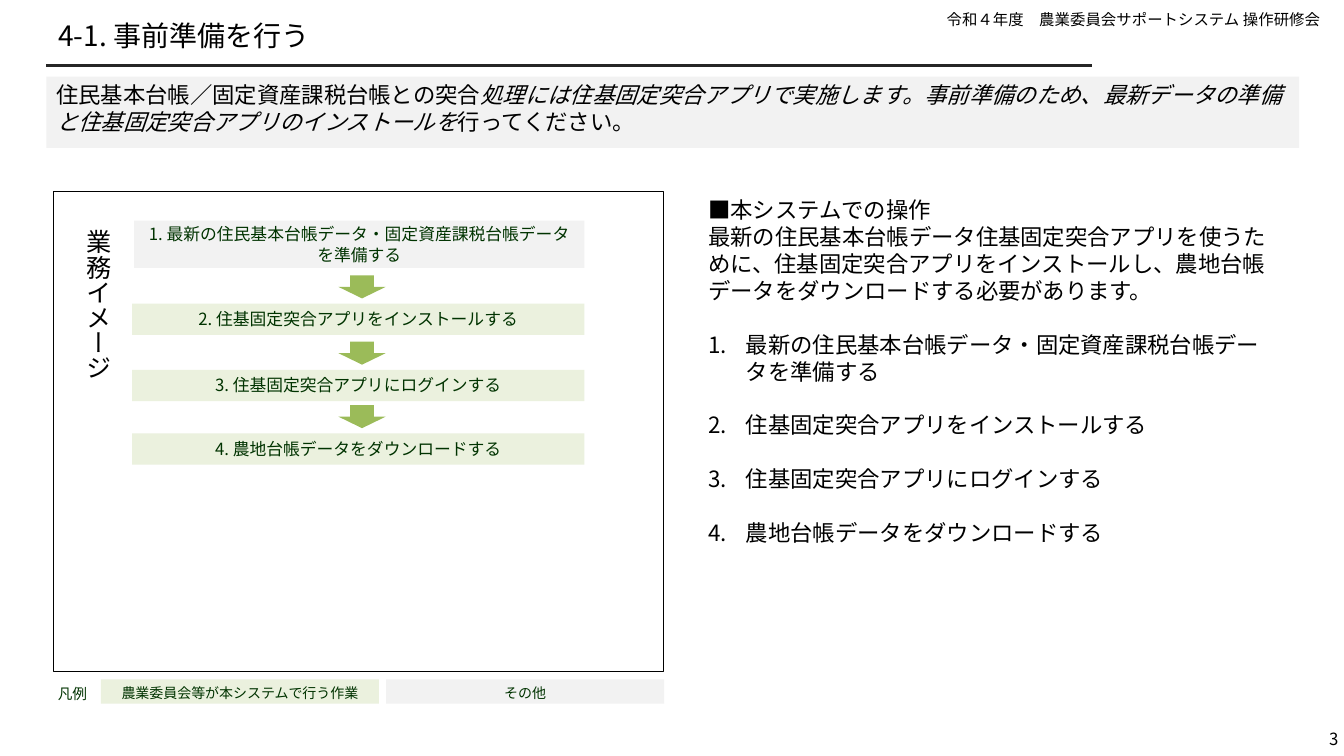
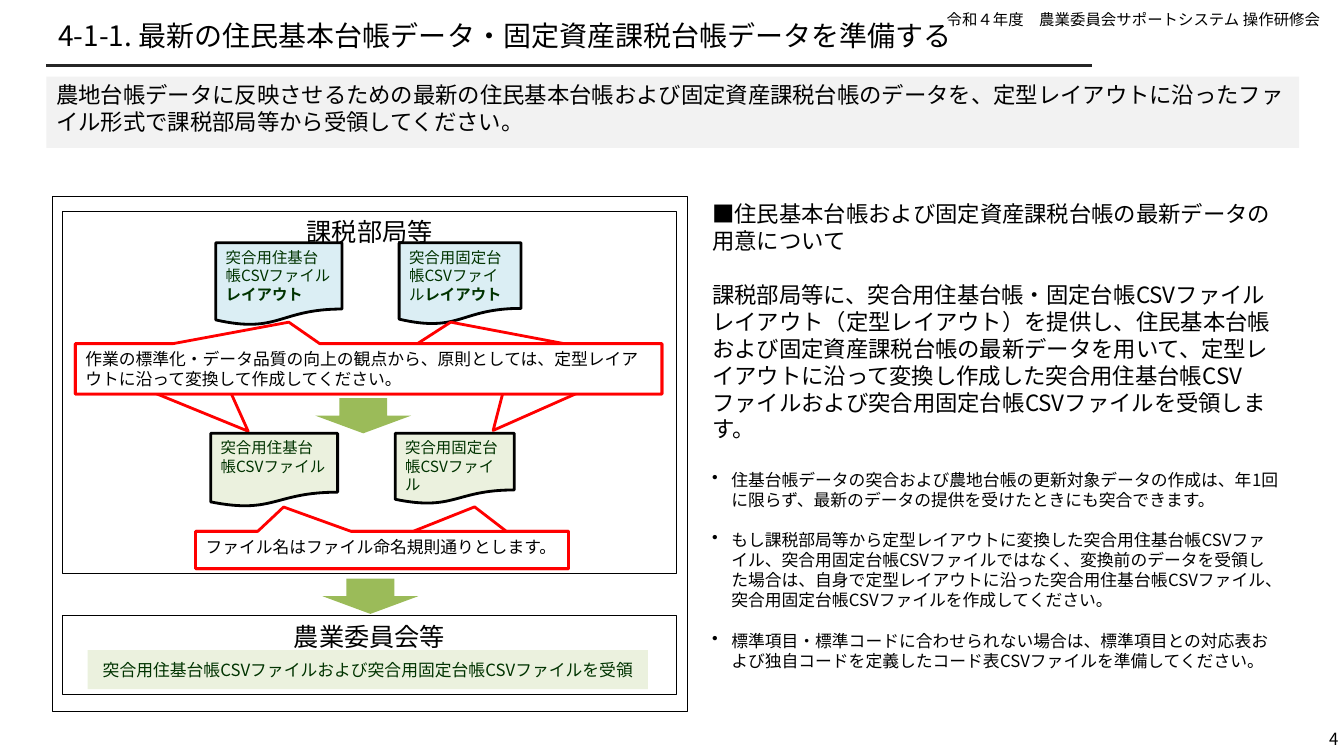
from lxml.etree import SubElement
from pptx import Presentation
from pptx.dml.color import RGBColor
from pptx.enum.shapes import MSO_CONNECTOR as Connector, MSO_SHAPE as Shape
from pptx.enum.text import MSO_ANCHOR as Anchor, PP_ALIGN as Align
from pptx.oxml.ns import qn
from pptx.util import Cm, Pt

FONT = "Noto Sans CJK JP"
BLACK, DARK_GREEN, RULE = "000000", "003300", "262626"
PALE_GREEN, PALE_GRAY, PALE_BLUE = "EBF1DE", "F2F2F2", "DBEEF4"
GREEN, RED, WHITE = "9BBB59", "FF0000", "FFFFFF"
LINE_HEIGHT = 1.2


def color(value):
    return RGBColor.from_string(value)


def add_span(para, text, size, ink, bold=False, italic=False):
    span = para.add_run()
    span.text = text
    font = span.font
    font.size, font.bold, font.italic = Pt(size), bold, italic
    font.color.rgb = color(ink)
    font.name = FONT
    properties = span._r.get_or_add_rPr()
    properties.set("lang", "ja-JP")
    SubElement(properties, qn("a:ea")).set("typeface", FONT)


def add_bullet(para, indent, mark):
    properties = para._p.get_or_add_pPr()
    properties.set("marL", str(Cm(indent)))
    properties.set("indent", str(-Cm(indent)))
    if mark == "1.":
        SubElement(properties, qn("a:buAutoNum")).set("type", "arabicPeriod")
    else:
        SubElement(properties, qn("a:buChar")).set("char", mark)


def write(box, *parts, size=12, ink=BLACK, align=Align.LEFT, anchor=Anchor.TOP,
          before=0, indent=0, mark=None, more=False):
    frame = box.text_frame
    frame.word_wrap = True
    frame.vertical_anchor = anchor
    para = frame.add_paragraph() if more else frame.paragraphs[0]
    para.alignment = align
    para.line_spacing = Pt(size * LINE_HEIGHT)
    if before:
        para.space_before = Pt(before)
    if mark:
        add_bullet(para, indent, mark)
    for part in parts:
        text, style = part if isinstance(part, tuple) else (part, {})
        add_span(para, text, size, ink, **style)


def set_margins(box, left=0):
    frame = box.text_frame
    frame.margin_left = Cm(left)
    frame.margin_top = frame.margin_right = frame.margin_bottom = 0


class Training:
    def __init__(self):
        self.deck = Presentation()
        self.deck.slide_width, self.deck.slide_height = Cm(33.87), Cm(19.05)
        self.page = None

    def start(self, number, title, *summary):
        self.page = self.deck.slides.add_slide(self.deck.slide_layouts[6])
        header = self.text_box(0.33, 0.13, 33.2, 0.74)
        write(header, "令和４年度　農業委員会サポートシステム 操作研修会",
              size=11, align=Align.RIGHT)
        self.rule(1.17, 1.65, 27.53)
        footer = self.text_box(32.33, 18.31, 1.4, 0.61)
        set_margins(footer)
        write(footer, str(number), align=Align.RIGHT, anchor=Anchor.MIDDLE)
        heading = self.text_box(1.17, 0.13, 26.37, 1.52)
        set_margins(heading, left=0.3)
        write(heading, title, size=20, anchor=Anchor.MIDDLE)
        band = self.shape(Shape.RECTANGLE, 1.17, 1.93, 31.57, 1.8, fill=PALE_GRAY)
        write(band, *summary, size=16)

    def text_box(self, left, top, width, height):
        return self.page.shapes.add_textbox(Cm(left), Cm(top), Cm(width), Cm(height))

    def rule(self, left, top, right):
        line = self.page.shapes.add_connector(
            Connector.STRAIGHT, Cm(left), Cm(top), Cm(right), Cm(top))
        line.line.color.rgb = color(RULE)
        line.line.width = Pt(1.5)
        SubElement(line._element.spPr, qn("a:effectLst"))

    def shape(self, kind, left, top, width, height, fill=None, line=None, weight=0.75):
        shape = self.page.shapes.add_shape(
            kind, Cm(left), Cm(top), Cm(width), Cm(height))
        shape.shadow.inherit = False
        if fill:
            shape.fill.solid()
            shape.fill.fore_color.rgb = color(fill)
        else:
            shape.fill.background()
        if line:
            shape.line.color.rgb = color(line)
            shape.line.width = Pt(weight)
        else:
            shape.line.fill.background()
        return shape

    def frame(self, left, top, width, height, label=None):
        box = self.shape(Shape.RECTANGLE, left, top, width, height, line=BLACK)
        if label:
            write(box, label, size=18, align=Align.CENTER)

    def task(self, left, top, width, height, text, fill=PALE_GREEN, size=12,
             anchor=Anchor.TOP):
        box = self.shape(Shape.RECTANGLE, left, top, width, height, fill=fill)
        write(box, text, size=size, ink=DARK_GREEN, align=Align.CENTER, anchor=anchor)

    def arrow(self, left, top, width, height):
        self.shape(Shape.DOWN_ARROW, left, top, width, height, fill=GREEN)

    def document(self, left, top, width, height, fill, *parts):
        box = self.shape(Shape.FLOWCHART_DOCUMENT, left, top, width, height,
                         fill=fill, line=BLACK, weight=2)
        write(box, *parts, size=11, ink=DARK_GREEN)

    def callout(self, left, top, width, height, tail, text=None):
        box = self.shape(Shape.RECTANGULAR_CALLOUT, left, top, width, height,
                         fill=WHITE, line=RED, weight=2)
        box.adjustments[0], box.adjustments[1] = tail
        if text:
            write(box, text)


def preparation(show):
    steps = ["最新の住民基本台帳データ・固定資産課税台帳データを準備する",
             "住基固定突合アプリをインストールする",
             "住基固定突合アプリにログインする",
             "農地台帳データをダウンロードする"]
    show.start(3, "4-1. 事前準備を行う",
               "住民基本台帳／固定資産課税台帳との突合",
               ("処理には住基固定突合アプリで実施します。事前準備のため、最新データの準備"
                "と住基固定突合アプリのインストールを", {"italic": True}),
               "行ってください。")

    guide = show.text_box(17.6, 4.83, 14.94, 9.14)
    write(guide, "■本システムでの操作", size=16)
    write(guide, "最新の住民基本台帳データ住基固定突合アプリを使うために、住基固定突合アプリを"
          "インストールし、農地台帳データをダウンロードする必要があります。", size=16, more=True)
    for step in steps:
        write(guide, step, size=16, before=19.2, indent=0.95, mark="1.", more=True)

    side = show.text_box(1.7, 5.54, 1.27, 5.61)
    write(side, "業務イメージ", size=18)
    side.text_frame._txBody.bodyPr.set("vert", "eaVert")

    show.frame(1.35, 4.83, 15.37, 12.09)
    show.task(3.38, 5.56, 11.35, 1.19, f"1. {steps[0]}", fill=PALE_GRAY,
              anchor=Anchor.MIDDLE)
    for number, (top, step) in enumerate(zip((7.65, 9.32, 10.92), steps[1:]), 2):
        show.arrow(8.53, top - 0.71, 1.19, 0.58)
        show.task(3.33, top, 11.4, 0.79, f"{number}. {step}")

    legend = show.text_box(1.14, 17.12, 1.37, 0.79)
    write(legend, "凡例", size=10.5, ink=DARK_GREEN, align=Align.CENTER)
    for left, fill, text in ((2.54, PALE_GREEN, "農業委員会等が本システムで行う作業"),
                             (9.73, PALE_GRAY, "その他")):
        show.task(left, 17.12, 7.01, 0.61, text, fill=fill, size=10)


def latest_data(show):
    resident, property_tax = "突合用住基台帳CSVファイル", "突合用固定台帳CSVファイル"
    layout = ("レイアウト", {"bold": True})
    show.start(4, "4-1-1. 最新の住民基本台帳データ・固定資産課税台帳データを準備する",
               "農地台帳データに反映させるための最新の住民基本台帳および固定資産課税台帳のデータを、"
               "定型レイアウトに沿ったファイル形式で課税部局等から受領してください。")

    show.callout(7.95, 8.79, 8.13, 1.04, (0.051, 1.478))
    show.callout(2.41, 8.81, 8.13, 1.04, (-0.027, 1.478))
    show.frame(1.32, 4.95, 16, 12.98)
    show.frame(1.57, 5.33, 15.49, 9.12, "課税部局等")
    show.frame(1.57, 15.52, 15.49, 1.98, "農業委員会等")
    show.document(5.31, 10.92, 3.2, 1.85, PALE_GREEN, resident)
    show.document(9.96, 10.92, 3, 1.78, PALE_GREEN, property_tax)
    show.arrow(8.13, 14.58, 2.41, 0.89)
    show.task(2.21, 16.38, 14.12, 0.99, f"{resident}および{property_tax}を受領",
              anchor=Anchor.MIDDLE)
    show.arrow(7.95, 10.03, 2.41, 0.89)
    show.document(5.44, 6.12, 3.18, 2.08, PALE_BLUE, resident, layout)
    show.document(10.06, 6.12, 3.07, 2.06, PALE_BLUE, property_tax, layout)

    naming = (4.93, 13.39, 9.4, 0.94)
    show.callout(*naming, (0.248, -1.157))
    show.callout(*naming, (-0.264, -1.153), "ファイル名はファイル命名規則通りとします。")
    conversion = (1.9, 8.66, 14.78, 1.27)
    show.callout(*conversion, (0.14, -0.926))
    show.callout(*conversion, (-0.136, -0.926),
                 "作業の標準化・データ品質の向上の観点から、原則としては、"
                 "定型レイアウトに沿って変換して作成してください。")

    guide = show.text_box(17.7, 4.93, 14.83, 12.22)
    write(guide, ("■", {"bold": True}),
          "住民基本台帳および固定資産課税台帳の最新データの用意について", size=16)
    write(guide, "課税部局等に、突合用住基台帳・固定台帳CSVファイルレイアウト（定型レイアウト）を"
          "提供し、住民基本台帳および固定資産課税台帳の最新データを用いて、定型レイアウトに"
          f"沿って変換し作成した{resident}および{property_tax}を受領します。",
          size=16, before=19.2, more=True)
    notes = [
        (19.2, "住基台帳データの突合および農地台帳の更新対象データの作成は、年1回に限らず、"
               "最新のデータの提供を受けたときにも突合できます。"),
        (14.4, f"もし課税部局等から定型レイアウトに変換した{resident}、{property_tax}ではなく、"
               "変換前のデータを受領した場合は、自身で定型レイアウトに沿った"
               f"{resident}、{property_tax}を作成してください。"),
        (14.4, "標準項目・標準コードに合わせられない場合は、標準項目との対応表および"
               "独自コードを定義したコード表CSVファイルを準備してください。"),
    ]
    for gap, note in notes:
        write(guide, note, before=gap, indent=0.48, mark="•", more=True)


def main():
    show = Training()
    preparation(show)
    latest_data(show)
    show.deck.save("out.pptx")


if __name__ == "__main__":
    main()
